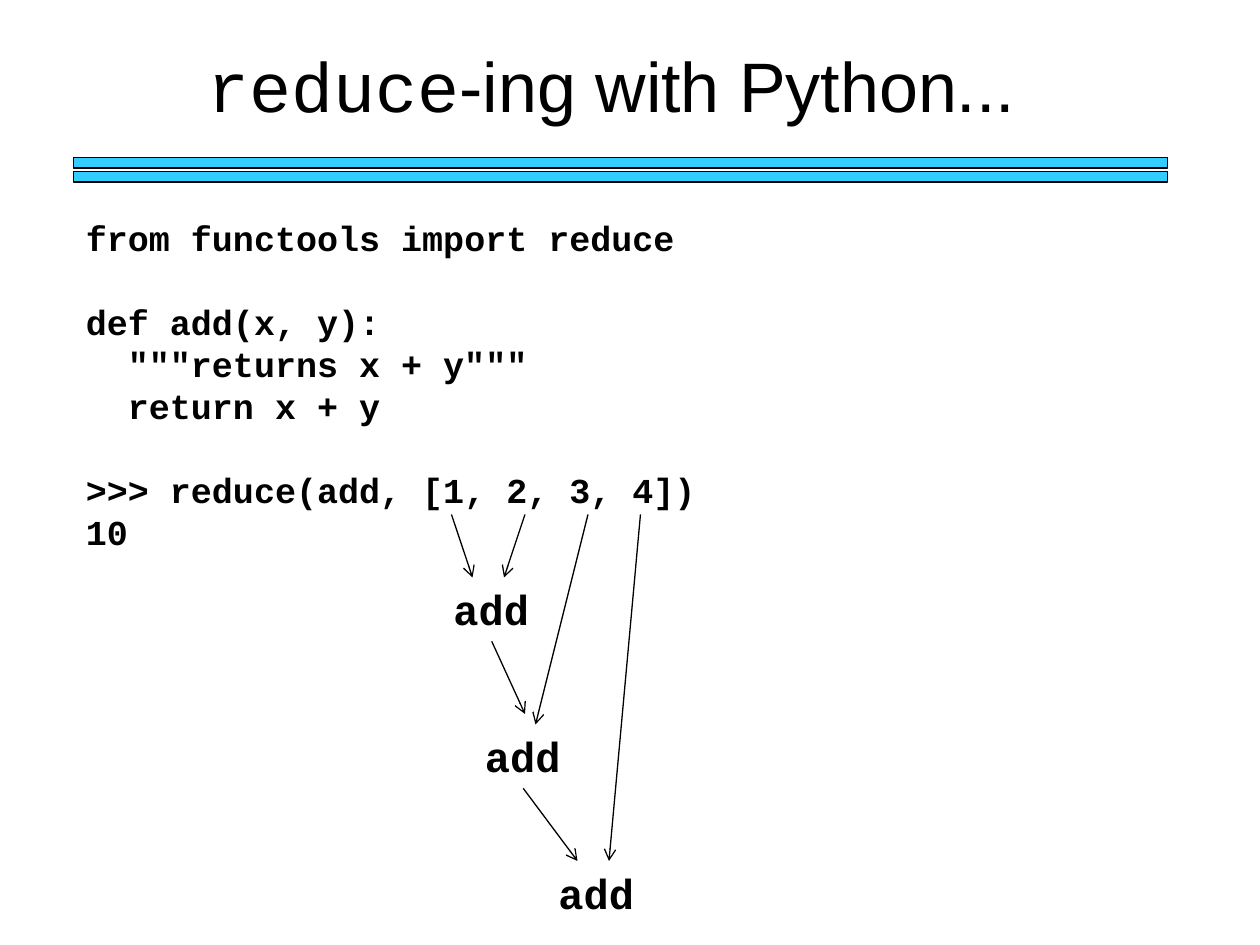
"""Build a slide that shows how reduce folds a list in Python."""
from typing import NamedTuple, Optional

import pptx
import pptx.dml.color
import pptx.enum.shapes
import pptx.enum.text
import pptx.oxml
import pptx.oxml.ns
import pptx.util
from lxml import etree

Pt = pptx.util.Pt
BLACK = pptx.dml.color.RGBColor(0x00, 0x00, 0x00)
CYAN = pptx.dml.color.RGBColor(0x33, 0xCC, 0xFF)
MONO = "Courier New"
SANS = "Arial"


class Line(NamedTuple):
    """A line of code with its indent in characters and blank lines above."""
    text: str
    indent: int = 0
    blank: int = 0


class Node(NamedTuple):
    """The place of one call of add."""
    left: float
    top: float


class Arrow(NamedTuple):
    """An arrow from a point, or from the bottom of a node, to a point."""
    x: float
    y: float
    node: Optional[int] = None
    start: float = 0


CODE = [
    Line("from functools import reduce"),
    Line("def add(x, y):", blank=1),
    Line('"""returns x + y"""', indent=2),
    Line("return x + y", indent=2),
    Line(">>> reduce(add, [1, 2, 3, 4])", blank=1),
    Line("10"),
]
NODES = [Node(252, 330), Node(270, 414), Node(312, 492)]
LIST_Y = 294
ARROWS = [
    Arrow(270, 330, start=258),
    Arrow(288, 330, start=300),
    Arrow(300, 408, node=0),
    Arrow(306, 414, start=336),
    Arrow(330, 492, node=1),
    Arrow(348, 492, start=366),
]


def style(run, size: float, face: str, bold: bool = False) -> None:
    """Set the font of a run."""
    font = run.font
    font.size, font.name, font.bold = Pt(size), face, bold
    font.color.rgb = BLACK


def add_box(shapes, left: float, top: float, width: float, height: float, wrap: bool):
    """Add a text box that grows with its text."""
    box = shapes.add_textbox(Pt(left), Pt(top), Pt(width), Pt(height))
    box.text_frame.word_wrap = wrap
    box.text_frame.auto_size = pptx.enum.text.MSO_AUTO_SIZE.SHAPE_TO_FIT_TEXT
    return box


def add_bars(shapes) -> None:
    """Add the double rule below the title."""
    group = shapes.add_group_shape().shapes
    for row in range(2):
        bar = group.add_shape(pptx.enum.shapes.MSO_SHAPE.RECTANGLE,
                              Pt(42), Pt(90 + 8 * row), Pt(625), Pt(6))
        bar.shadow.inherit = False
        bar.fill.solid()
        bar.fill.fore_color.rgb = CYAN
        bar.line.color.rgb = BLACK
        bar.line.width = Pt(0.75)


def add_title(shapes) -> None:
    """Add the title in two fonts."""
    para = add_box(shapes, 34.5, 21, 630, 55.5, True).text_frame.paragraphs[0]
    para.alignment = pptx.enum.text.PP_ALIGN.CENTER
    for text, face in (("reduce", MONO), ("-ing with Python...", SANS)):
        run = para.add_run()
        run.text = text
        style(run, 40, face)


def add_code(shapes, lines: list[Line]) -> None:
    """Add the code, one paragraph a line."""
    frame = add_box(shapes, 42, 120, 366, 201, False).text_frame
    frame.text = "\n".join(line.text for line in lines)
    for para, line in zip(frame.paragraphs, lines):
        style(para.runs[0], 20, MONO, True)
        para.space_before = Pt(24 * line.blank)
        para._p.get_or_add_pPr().set("marL", str(Pt(12 * line.indent)))


def add_node(shapes, node: Node):
    """Add one call of add."""
    box = add_box(shapes, node.left, node.top, 58, 36.5, False)
    box.text_frame.text = "add"
    style(box.text_frame.paragraphs[0].runs[0], 24, MONO, True)
    return box


def add_arrow(shapes, arrow: Arrow, boxes: list) -> None:
    """Add a thin arrow with an open head."""
    link = shapes.add_connector(pptx.enum.shapes.MSO_CONNECTOR.STRAIGHT,
                                Pt(arrow.start), Pt(LIST_Y), Pt(arrow.x), Pt(arrow.y))
    if arrow.node is not None:
        link.begin_connect(boxes[arrow.node], 2)
    link.line.color.rgb = BLACK
    link.line.width = Pt(0.75)
    tail = etree.SubElement(link.line._get_or_add_ln(), pptx.oxml.ns.qn("a:tailEnd"))
    tail.set("type", "arrow")
    etree.SubElement(link._element.spPr, pptx.oxml.ns.qn("a:effectLst"))


def main() -> None:
    """Build and save the slide."""
    deck = pptx.Presentation()
    deck.slide_width, deck.slide_height = Pt(720), Pt(540)
    shapes = deck.slides.add_slide(deck.slide_layouts[6]).shapes
    add_bars(shapes)
    add_title(shapes)
    add_code(shapes, CODE)
    boxes = [add_node(shapes, node) for node in NODES]
    for arrow in ARROWS:
        add_arrow(shapes, arrow, boxes)
    deck.save("out.pptx")


if __name__ == "__main__":
    main()
